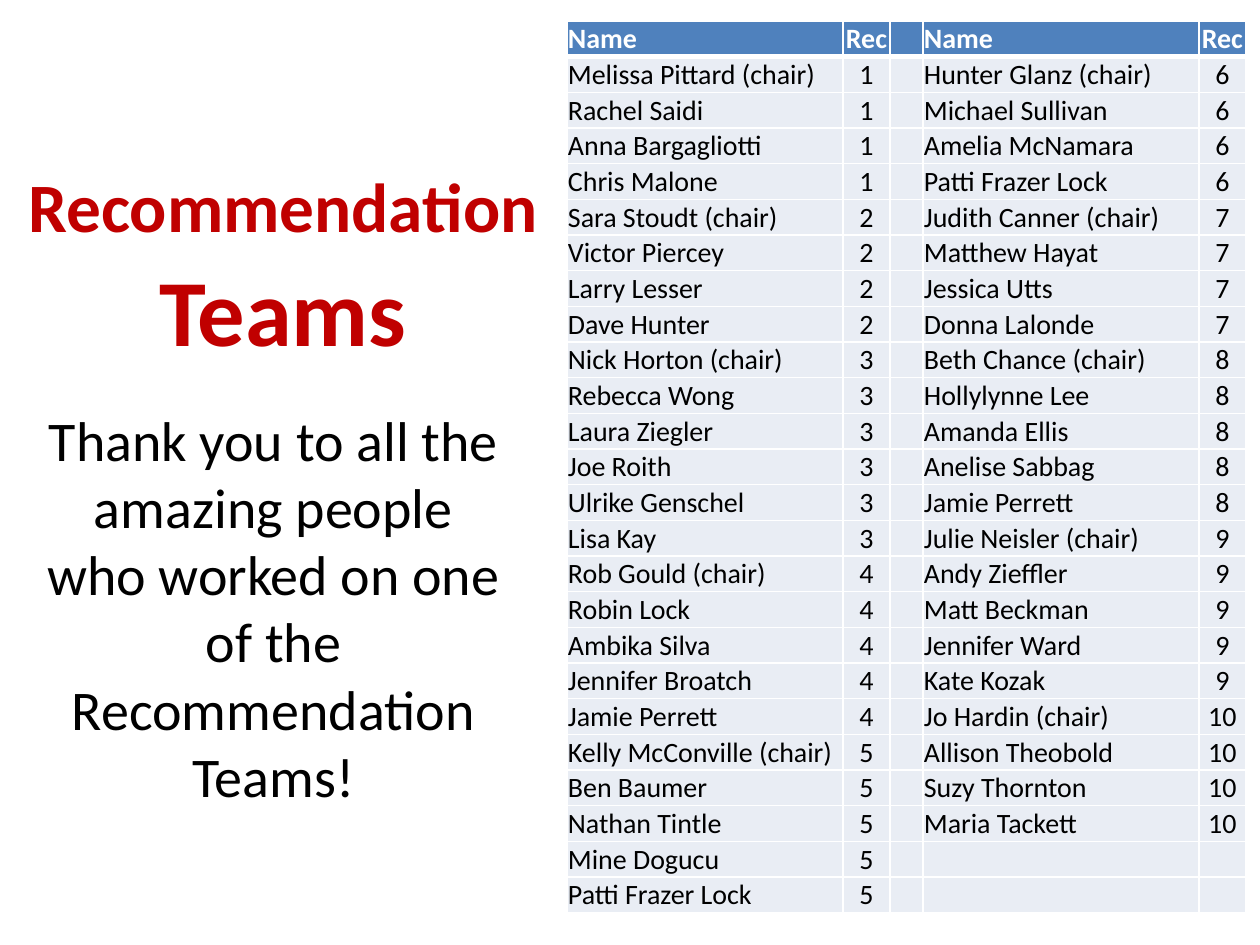
import itertools

import lxml.etree
import pptx
import pptx.dml.color
import pptx.enum.text
import pptx.oxml.ns
import pptx.util

FONT = "Calibri"
RED, BLUE, PALE, WHITE, BLACK = "C00000", "4F81BD", "E9EDF4", "FFFFFF", "000000"

TITLE_RUNS = [("Recommendation", 39.6), (" Teams", 54)]
THANKS = "Thank you to all the amazing people who worked on one of the Recommendation Teams!"
HEADER = ("Name", "Rec")

# Members by recommendation number; the first of each team is its chair.
LEFT_TEAMS = {
    1: ["Melissa Pittard", "Rachel Saidi", "Anna Bargagliotti", "Chris Malone"],
    2: ["Sara Stoudt", "Victor Piercey", "Larry Lesser", "Dave Hunter"],
    3: ["Nick Horton", "Rebecca Wong", "Laura Ziegler", "Joe Roith",
        "Ulrike Genschel", "Lisa Kay"],
    4: ["Rob Gould", "Robin Lock", "Ambika Silva", "Jennifer Broatch", "Jamie Perrett"],
    5: ["Kelly McConville", "Ben Baumer", "Nathan Tintle", "Mine Dogucu",
        "Patti Frazer Lock"],
}
RIGHT_TEAMS = {
    6: ["Hunter Glanz", "Michael Sullivan", "Amelia McNamara", "Patti Frazer Lock"],
    7: ["Judith Canner", "Matthew Hayat", "Jessica Utts", "Donna Lalonde"],
    8: ["Beth Chance", "Hollylynne Lee", "Amanda Ellis", "Anelise Sabbag", "Jamie Perrett"],
    9: ["Julie Neisler", "Andy Zieffler", "Matt Beckman", "Jennifer Ward", "Kate Kozak"],
    10: ["Jo Hardin", "Allison Theobold", "Suzy Thornton", "Maria Tackett"],
}

TITLE_BOX = (10, 136, 546, 231)
THANKS_BOX = (32, 399, 483, 420)
TABLE_LEFT, TABLE_TOP, TABLE_HEIGHT = 567, 21, 892
COLUMN_WIDTHS = [276, 47, 33, 276, 47]
REC_COLUMNS = (1, 4)
CELL_SIZE = 16


def px(length):
    return pptx.util.Emu(round(length * 914400 / 126))


def color(value):
    return pptx.dml.color.RGBColor.from_string(value)


def style(font, size, value, bold=False):
    font.name = FONT
    font.size = pptx.util.Pt(size)
    font.bold = bold
    font.color.rgb = color(value)


def roster(teams):
    rows = [HEADER]
    for number, members in teams.items():
        for index, member in enumerate(members):
            rows.append((member if index else f"{member} (chair)", str(number)))
    return rows


def add_border(cell, side, width):
    properties = cell._tc.get_or_add_tcPr()
    line = lxml.etree.SubElement(properties, pptx.oxml.ns.qn(f"a:ln{side}"),
                                 w=str(pptx.util.Pt(width)))
    fill = lxml.etree.SubElement(line, pptx.oxml.ns.qn("a:solidFill"))
    lxml.etree.SubElement(fill, pptx.oxml.ns.qn("a:srgbClr"), val=WHITE)


def format_cell(cell, text, is_header, is_first_row, centered):
    borders = {"L": 1, "R": 1, "T": 3 if is_first_row else 1, "B": 3 if is_header else 1}
    for side, width in borders.items():
        add_border(cell, side, width)
    cell.fill.solid()
    cell.fill.fore_color.rgb = color(BLUE if is_header else PALE)
    cell.margin_left = cell.margin_right = cell.margin_top = px(1)
    cell.margin_bottom = 0
    cell.vertical_anchor = pptx.enum.text.MSO_ANCHOR.MIDDLE
    paragraph = cell.text_frame.paragraphs[0]
    if not text:
        # Keeps an empty cell from growing its row.
        lxml.etree.SubElement(paragraph._p, pptx.oxml.ns.qn("a:endParaRPr"),
                              sz=str(CELL_SIZE * 100))
        return
    paragraph.text = text
    if centered:
        paragraph.alignment = pptx.enum.text.PP_ALIGN.CENTER
    style(paragraph.runs[0].font, CELL_SIZE, WHITE if is_header else BLACK, is_header)


def add_title(slide):
    title = slide.shapes.title
    title.left, title.top, title.width, title.height = map(px, TITLE_BOX)
    frame = title.text_frame
    frame.word_wrap = True
    frame.auto_size = pptx.enum.text.MSO_AUTO_SIZE.NONE
    frame.vertical_anchor = pptx.enum.text.MSO_ANCHOR.MIDDLE
    paragraph = frame.paragraphs[0]
    paragraph.alignment = pptx.enum.text.PP_ALIGN.CENTER
    for text, size in TITLE_RUNS:
        run = paragraph.add_run()
        run.text = text
        style(run.font, size, RED, True)


def add_thanks(slide):
    frame = slide.shapes.add_textbox(*map(px, THANKS_BOX)).text_frame
    frame.word_wrap = True
    frame.auto_size = pptx.enum.text.MSO_AUTO_SIZE.SHAPE_TO_FIT_TEXT
    frame.text = THANKS
    paragraph = frame.paragraphs[0]
    paragraph.alignment = pptx.enum.text.PP_ALIGN.CENTER
    style(paragraph.runs[0].font, 32, BLACK)


def add_roster_table(slide):
    pairs = itertools.zip_longest(roster(LEFT_TEAMS), roster(RIGHT_TEAMS),
                                  fillvalue=("", ""))
    rows = [(*left, "", *right) for left, right in pairs]
    table = slide.shapes.add_table(
        len(rows), len(COLUMN_WIDTHS), px(TABLE_LEFT), px(TABLE_TOP),
        px(sum(COLUMN_WIDTHS)), px(TABLE_HEIGHT)).table
    for column, width in zip(table.columns, COLUMN_WIDTHS):
        column.width = px(width)
    for row_index, row in enumerate(rows):
        table.rows[row_index].height = px(TABLE_HEIGHT / len(rows))
        for column_index, text in enumerate(row):
            format_cell(table.cell(row_index, column_index), text,
                        row_index == 0, row_index == 1, column_index in REC_COLUMNS)


def main():
    presentation = pptx.Presentation()
    presentation.slide_width, presentation.slide_height = px(1260), px(945)
    slide = presentation.slides.add_slide(presentation.slide_layouts[5])
    add_title(slide)
    add_thanks(slide)
    add_roster_table(slide)
    presentation.save("out.pptx")


if __name__ == "__main__":
    main()
